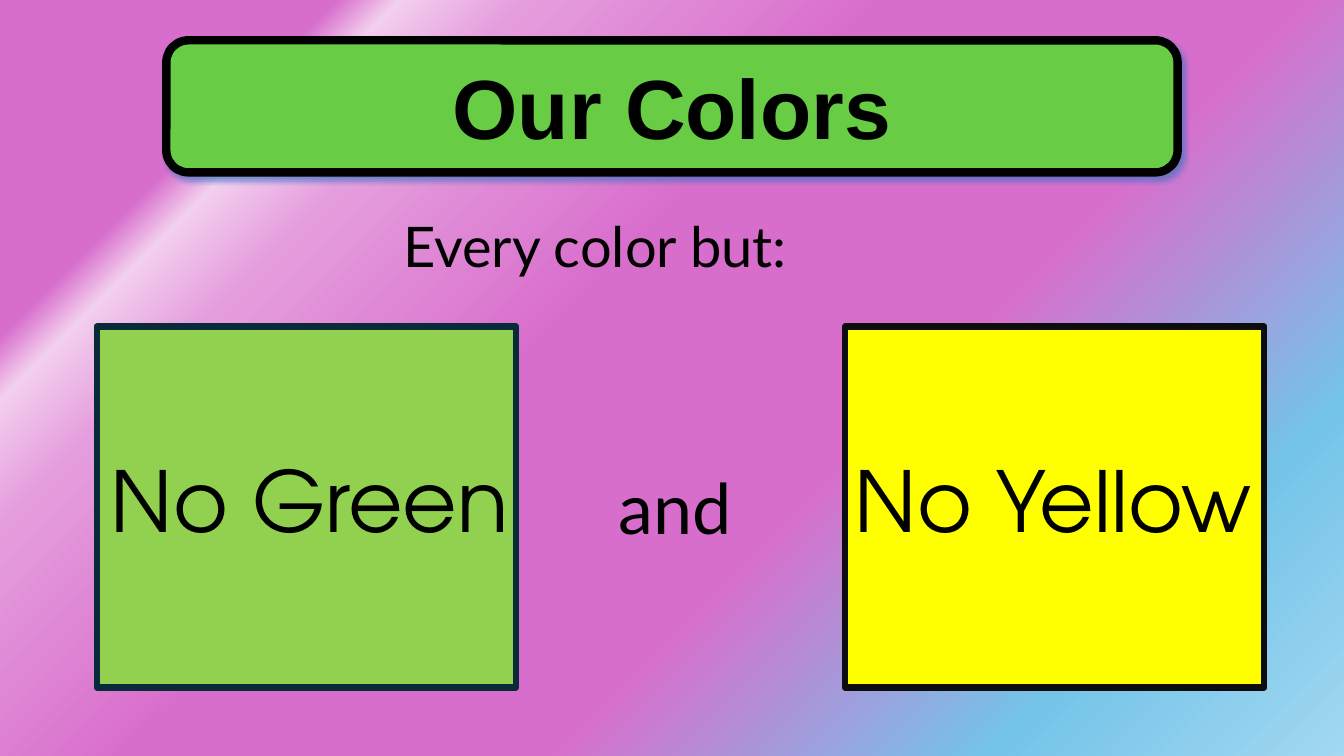
from lxml import etree
from pptx import Presentation
from pptx import util as u
from pptx.dml.color import RGBColor
from pptx.enum import shapes, text
from pptx.oxml.ns import qn

BLACK = RGBColor(0x00, 0x00, 0x00)
TITLE_GREEN = RGBColor(0x68, 0xCC, 0x45)
GREEN = RGBColor(0x92, 0xD0, 0x50)
YELLOW = RGBColor(0xFF, 0xFF, 0x00)
NAVY = RGBColor(0x09, 0x2A, 0x39)
CHARCOAL = RGBColor(0x0D, 0x0D, 0x0D)
GLOW_BLUE = RGBColor(0x44, 0x72, 0xC4)

# Background stops: position in percent, colour
BACKGROUND_STOPS = [
    (16, RGBColor(0xD8, 0x6E, 0xCC)),
    (19, RGBColor(0xF2, 0xCF, 0xEE)),
    (25, RGBColor(0xE5, 0x9E, 0xDD)),
    (42, RGBColor(0xD8, 0x6E, 0xCC)),
    (62, RGBColor(0xD8, 0x6E, 0xCC)),
    (83, RGBColor(0x74, 0xC4, 0xE9)),
    (100, RGBColor(0xA2, 0xD8, 0xF0)),
]


def paint_background(slide):
    fill = slide.background.fill
    fill.gradient()
    fill.gradient_angle = 315
    stops = slide.element.find(".//" + qn("a:gsLst"))
    for stop in list(stops):
        stops.remove(stop)
    for position, color in BACKGROUND_STOPS:
        stop = etree.SubElement(stops, qn("a:gs"), pos=str(position * 1000))
        etree.SubElement(stop, qn("a:srgbClr"), val=str(color))


def write(frame, words, *, font, size, bold=False, align=text.PP_ALIGN.LEFT,
          anchor=text.MSO_ANCHOR.TOP):
    frame.word_wrap = True
    frame.vertical_anchor = anchor
    paragraph = frame.paragraphs[0]
    paragraph.alignment = align
    run = paragraph.add_run()
    run.text = words
    run.font.name = font
    run.font.size = u.Pt(size)
    run.font.bold = bold
    run.font.color.rgb = BLACK


def add_panel(slide, kind, box, fill, line, weight):
    panel = slide.shapes.add_shape(kind, *map(u.Inches, box))
    panel.shadow.inherit = False
    panel.fill.solid()
    panel.fill.fore_color.rgb = fill
    panel.line.color.rgb = line
    panel.line.width = u.Pt(weight)
    return panel


def add_words(slide, box, words, **style):
    label = slide.shapes.add_textbox(*map(u.Inches, box))
    write(label.text_frame, words, **style)


def add_title(slide, box):
    banner = add_panel(slide, shapes.MSO_SHAPE.ROUNDED_RECTANGLE, box,
                       TITLE_GREEN, BLACK, 6)
    write(banner.text_frame, "Our Colors", font="Arial", size=60, bold=True,
          align=text.PP_ALIGN.CENTER, anchor=text.MSO_ANCHOR.MIDDLE)
    # Soft blue shadow around the banner
    effects = banner.element.spPr.find(qn("a:effectLst"))
    shadow = etree.SubElement(effects, qn("a:outerShdw"), blurRad="50800",
                              dist="38100", dir="3600000", rotWithShape="0")
    tint = etree.SubElement(shadow, qn("a:srgbClr"), val=str(GLOW_BLUE))
    etree.SubElement(tint, qn("a:alpha"), val="65000")


def add_swatch(slide, box, words, fill, line, indent, label_width):
    left, top, _, _ = box
    add_panel(slide, shapes.MSO_SHAPE.RECTANGLE, box, fill, line, 4.5)
    add_words(slide, (left + indent, top + 1.16, label_width, 1.11), words,
              font="TeX Gyre Adventor", size=60)


def main():
    deck = Presentation()
    deck.slide_width, deck.slide_height = u.Inches(13.33), u.Inches(7.5)
    slide = deck.slides.add_slide(deck.slide_layouts[6])

    paint_background(slide)
    add_title(slide, (1.65, 0.4, 10.03, 1.31))

    # Excluded colours
    add_swatch(slide, (8.38, 3.24, 4.16, 3.58), "No Yellow", YELLOW, CHARCOAL,
               indent=0, label_width=6.59)
    add_swatch(slide, (0.96, 3.24, 4.16, 3.58), "No Green", GREEN, NAVY,
               indent=0.04, label_width=5.81)

    # Linking words
    add_words(slide, (3.9, 2.05, 6.12, 0.77), "Every color but:",
              font="Lato", size=40)
    add_words(slide, (6.04, 4.56, 2.12, 0.94), "and", font="Lato", size=50)

    deck.save("out.pptx")


if __name__ == "__main__":
    main()
